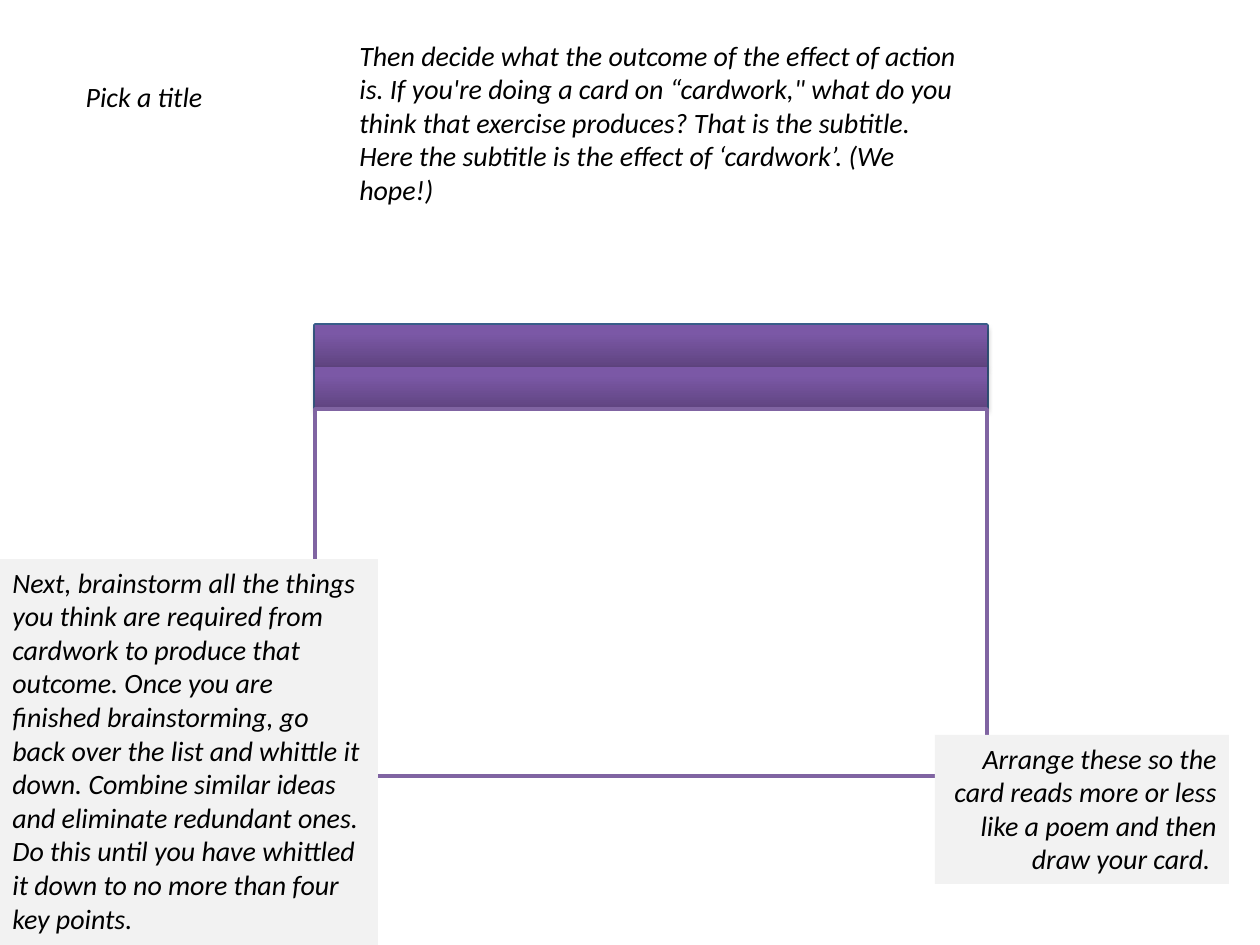
from copy import deepcopy

from lxml import etree
from pptx import Presentation
from pptx import util as u
from pptx.dml.color import RGBColor
from pptx.enum import shapes, text
from pptx.oxml.ns import qn

# Content: wording, place (left, top, width, height in px), look
TITLE = ("Pick a title", (73, 73, 144, 47))
NOTES = [
    ("Then decide what the outcome of the effect of action is. If you're doing "
     "a card on “cardwork,\" what do you think that exercise produces? That is "
     "the subtitle. Here the subtitle is the effect of ‘cardwork’. (We hope!)",
     (347, 32, 630, 183), None, "LEFT"),
    ("Next, brainstorm all the things you think are required from cardwork to "
     "produce that outcome. Once you are finished brainstorming, go back over "
     "the list and whittle it down. Combine similar ideas and eliminate "
     "redundant ones. Do this until you have whittled it down to no more than "
     "four key points.",
     (0, 559, 378, 386), "F2F2F2", "LEFT"),
    ("Arrange these so the card reads more or less like a poem and then draw "
     "your card. ",
     (935, 735, 294, 149), "F2F2F2", "RIGHT"),
]
CARD_LEFT, CARD_TOP, CARD_WIDTH, CARD_HEIGHT = 315, 325, 672, 451
BAR_HEIGHT, BAR_COUNT = 42, 2
BAR_STOPS = [(0, "5F4480"), (0.8, "7B58A6"), (1, "7C57A8")]
FONT = {"name": "Calibri", "size": u.Pt(16), "italic": True, "bold": False}
PX = 914400 / 126


def emu(px):
    return u.Emu(round(px * PX))


def rgb(value):
    return RGBColor.from_string(value)


def write(box, words, wrap, align):
    frame = box.text_frame
    frame.text = words
    for name, value in {
        "word_wrap": wrap,
        "auto_size": text.MSO_AUTO_SIZE.SHAPE_TO_FIT_TEXT,
        "vertical_anchor": text.MSO_ANCHOR.TOP,
    }.items():
        setattr(frame, name, value)
    paragraph = frame.paragraphs[0]
    paragraph.alignment = text.PP_ALIGN[align]
    font = paragraph.runs[0].font
    for name, value in FONT.items():
        setattr(font, name, value)
    font.color.rgb = rgb("000000")


def rectangle(slide, place):
    shape = slide.shapes.add_shape(
        shapes.MSO_SHAPE.RECTANGLE, *map(emu, place))
    shape.shadow.inherit = False
    return shape


def add_panel(slide, place, line):
    panel = rectangle(slide, place)
    panel.fill.solid()
    panel.fill.fore_color.rgb = rgb("FFFFFF")
    panel.line.color.rgb = rgb(line)
    panel.line.width = u.Pt(2)


def add_bar(slide, place):
    bar = rectangle(slide, place)
    bar.line.fill.background()
    bar.fill.gradient()
    bar.fill.gradient_angle = 90
    properties = bar._element.spPr
    stop_list = properties.find(".//" + qn("a:gsLst"))
    stop_list.append(deepcopy(stop_list[-1]))
    for stop, (position, color) in zip(bar.fill.gradient_stops, BAR_STOPS):
        stop.position = position
        stop.color.rgb = rgb(color)
    # Soft shadow straight below
    shadow = etree.SubElement(
        properties.find(qn("a:effectLst")), qn("a:outerShdw"),
        blurRad=str(u.Pt(3.1)), dist=str(u.Pt(1.8)), dir="5400000",
        rotWithShape="0")
    black = etree.SubElement(shadow, qn("a:srgbClr"), val="000000")
    etree.SubElement(black, qn("a:alpha"), val="35000")


def main():
    deck = Presentation()
    deck.slide_width, deck.slide_height = emu(1260), emu(945)
    slide = deck.slides.add_slide(deck.slide_layouts[5])

    # Title
    words, place = TITLE
    title = slide.shapes.title
    for name, px in zip(("left", "top", "width", "height"), place):
        setattr(title, name, emu(px))
    write(title, words, False, "LEFT")

    # Card: outline, header bars, body
    add_panel(slide, (CARD_LEFT, CARD_TOP, CARD_WIDTH, CARD_HEIGHT), "3A5F8C")
    for row in range(BAR_COUNT):
        add_bar(slide, (CARD_LEFT, CARD_TOP + row * BAR_HEIGHT,
                        CARD_WIDTH, BAR_HEIGHT))
    header = BAR_COUNT * BAR_HEIGHT
    add_panel(slide, (CARD_LEFT, CARD_TOP + header,
                      CARD_WIDTH, CARD_HEIGHT - header), "8064A2")

    # Instructions around the card
    for words, place, fill, align in NOTES:
        note = slide.shapes.add_textbox(*map(emu, place))
        if fill:
            note.fill.solid()
            note.fill.fore_color.rgb = rgb(fill)
        write(note, words, True, align)

    deck.save("out.pptx")


if __name__ == "__main__":
    main()
